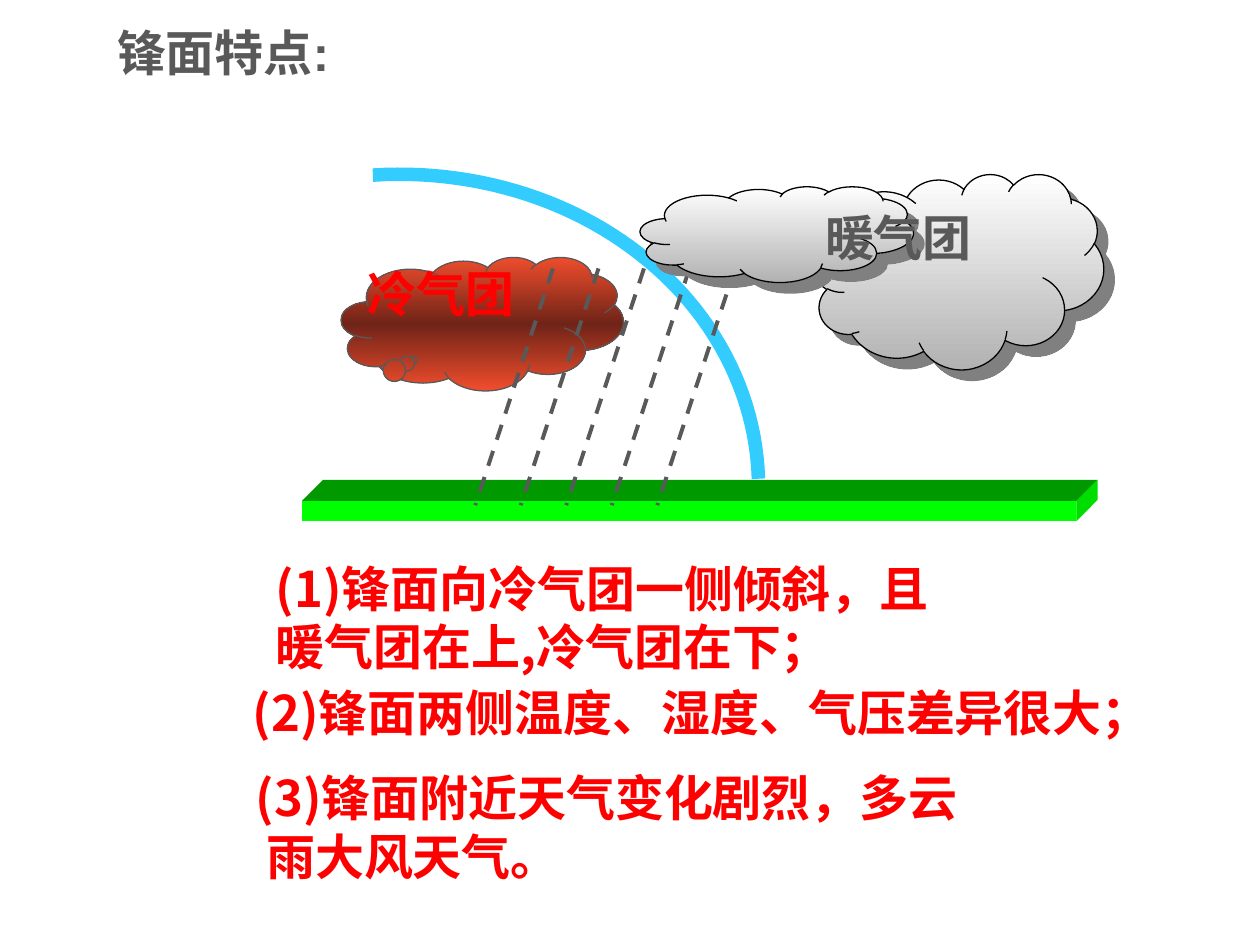
"""Build a slide on the features of a weather front."""
import copy

import pptx
import pptx.dml.color
import pptx.enum.dml
import pptx.enum.shapes
import pptx.enum.text
import pptx.oxml
import pptx.oxml.ns
import pptx.util

Pt = pptx.util.Pt
SHAPES = pptx.enum.shapes.MSO_SHAPE
COLORS = {
    "grey": "595959", "red": "FF0000", "front": "33CCFF", "black": "000000",
    "white": "FFFFFF", "silver": "B2B2B2", "shadow": "808080",
    "cold": "F04D2C", "cold_dark": "6F2418",
    "ground": "00FF00", "ground_top": "009900", "ground_side": "00DD00",
}
CJK = "Noto Sans CJK SC"


def rgb(name):
    """Return the named colour."""
    return pptx.dml.color.RGBColor.from_string(COLORS[name])


def add_text(page, text, left, top, width, height, color, font="Arial", wrap=True, hanging=0):
    """Add a bold 28 point text box."""
    box = page.shapes.add_textbox(Pt(left), Pt(top), Pt(width), Pt(height))
    frame = box.text_frame
    frame.word_wrap = wrap
    frame.auto_size = pptx.enum.text.MSO_AUTO_SIZE.SHAPE_TO_FIT_TEXT
    para = frame.paragraphs[0]
    para.text = text
    if hanging:
        properties = para._p.get_or_add_pPr()
        properties.set("marL", str(Pt(hanging)))
        properties.set("indent", str(-Pt(hanging)))
    para.font.name = font
    para.font.size = Pt(28)
    para.font.bold = True
    para.font.color.rgb = rgb(color)


def add_drop_shadow(shape):
    """Give a shape a solid shadow to the lower right."""
    effects = shape._element.spPr.find(pptx.oxml.ns.qn("a:effectLst"))
    effects.append(pptx.oxml.parse_xml(
        f'<a:outerShdw {pptx.oxml.ns.nsdecls("a")} dist="{Pt(8.5)}" dir="2700000" '
        f'algn="ctr" rotWithShape="0"><a:srgbClr val="{COLORS["shadow"]}"/></a:outerShdw>'))


def add_cloud(page, kind, left, top, width, height, stops, line):
    """Add a cloud with a vertical gradient of evenly spaced colours."""
    cloud = page.shapes.add_shape(kind, Pt(left), Pt(top), Pt(width), Pt(height))
    cloud.shadow.inherit = False
    cloud.fill.gradient()
    cloud.fill.gradient_angle = 270
    stop_list = next(cloud._element.spPr.iter(pptx.oxml.ns.qn("a:gsLst")))
    while len(stop_list) < len(stops):
        stop_list.append(copy.deepcopy(stop_list[-1]))
    for index, (stop, color) in enumerate(zip(cloud.fill.gradient_stops, stops)):
        stop.position = index / (len(stops) - 1)
        stop.color.rgb = rgb(color)
    cloud.line.color.rgb = rgb(line)
    cloud.line.width = Pt(0.75)
    return cloud


def add_outline(page, points, close):
    """Add a freeform through the points."""
    corners = [(Pt(x), Pt(y)) for x, y in points]
    builder = page.shapes.build_freeform(*corners[0])
    builder.add_line_segments(corners[1:], close=close)
    shape = builder.convert_to_shape()
    shape.shadow.inherit = False
    return shape


def add_face(page, points, color):
    """Add a filled face of the ground block."""
    face = add_outline(page, points, True)
    face.fill.solid()
    face.fill.fore_color.rgb = rgb(color)
    face.line.fill.background()


def add_ground(page, left, top, width, height, depth):
    """Add the ground as a block seen from above left."""
    right, bottom = left + width, top + height
    front = page.shapes.add_shape(SHAPES.RECTANGLE, Pt(left), Pt(top), Pt(width), Pt(height))
    front.shadow.inherit = False
    front.fill.solid()
    front.fill.fore_color.rgb = rgb("ground")
    front.line.fill.background()
    back_right = (right + depth, top - depth)
    add_face(page, [(left, top), (left + depth, top - depth), back_right, (right, top)],
             "ground_top")
    add_face(page, [(right, top), back_right, (right + depth, bottom - depth), (right, bottom)],
             "ground_side")


def curve_points(start, control, second, end, steps=24):
    """Return points along a cubic curve, without its start."""
    points = []
    for step in range(1, steps + 1):
        t = step / steps
        weights = ((1 - t) ** 3, 3 * t * (1 - t) ** 2, 3 * t ** 2 * (1 - t), t ** 3)
        points.append(tuple(
            sum(weight * value for weight, value in zip(weights, values))
            for values in zip(start, control, second, end)))
    return points


def add_front(page):
    """Add the curved front between the air masses."""
    start, middle, end = (213.1, 100.1), (365.8, 145.4), (433.4, 273.6)
    points = [start]
    points += curve_points(start, (269.3, 96.5), (324.7, 113), middle)
    points += curve_points(middle, (407.5, 177.8), (432, 224.6), end)
    front = add_outline(page, points, False)
    front.fill.background()
    front.line.color.rgb = rgb("front")
    front.line.width = Pt(7.75)


def add_rain(page, left, top, run, drop):
    """Add one slanted dashed line of rain."""
    rain = page.shapes.add_connector(
        pptx.enum.shapes.MSO_CONNECTOR.STRAIGHT,
        Pt(left), Pt(top), Pt(left - run), Pt(top + drop))
    rain.line.color.rgb = rgb("grey")
    rain.line.width = Pt(2.25)
    rain.line.dash_style = pptx.enum.dml.MSO_LINE.DASH
    rain._element.spPr.append(pptx.oxml.parse_xml(
        f'<a:effectLst {pptx.oxml.ns.nsdecls("a")}/>'))


def main():
    """Build and save the slide."""
    deck = pptx.Presentation()
    deck.slide_width, deck.slide_height = Pt(720), Pt(540)
    page = deck.slides.add_slide(deck.slide_layouts[6])

    add_text(page, "锋面特点:", 59.8, 9.4, 527, 41, "grey")
    add_text(page, "(2)锋面两侧温度、湿度、气压差异很大；", 137.5, 386.6, 537, 41, "red", CJK)
    add_text(page, "(3)锋面附近天气变化剧烈，多云 雨大风天气。",
             139, 434.9, 447.8, 74.2, "red", CJK, hanging=6)
    add_text(page, "(1)锋面向冷气团一侧倾斜，且暖气团在上,冷气团在下；",
             150.5, 315.4, 402.5, 74.2, "red", CJK)

    cold = add_cloud(page, SHAPES.CLOUD_CALLOUT, 195, 146.9, 161.3, 76.3,
                     ["cold", "cold_dark", "cold"], "grey")
    cold.adjustments[0], cold.adjustments[1] = -0.245, 0.274
    add_text(page, "冷气团", 203, 146.9, 98.6, 41, "red")

    add_ground(page, 172.6, 286.2, 442.6, 11.5, 12)
    add_front(page)
    for index in range(5):
        add_rain(page, 316 + 26 * index, 153.4, 44.4, 135.3)

    for place in [(464.4, 99.4, 166.3, 111.6), (365.8, 106.6, 156.2, 54.7)]:
        add_drop_shadow(add_cloud(page, SHAPES.CLOUD, *place, ["white", "silver"], "black"))
    add_text(page, "暖气团", 464.4, 115.2, 98.6, 41, "grey", wrap=False)

    deck.save("out.pptx")


if __name__ == "__main__":
    main()
